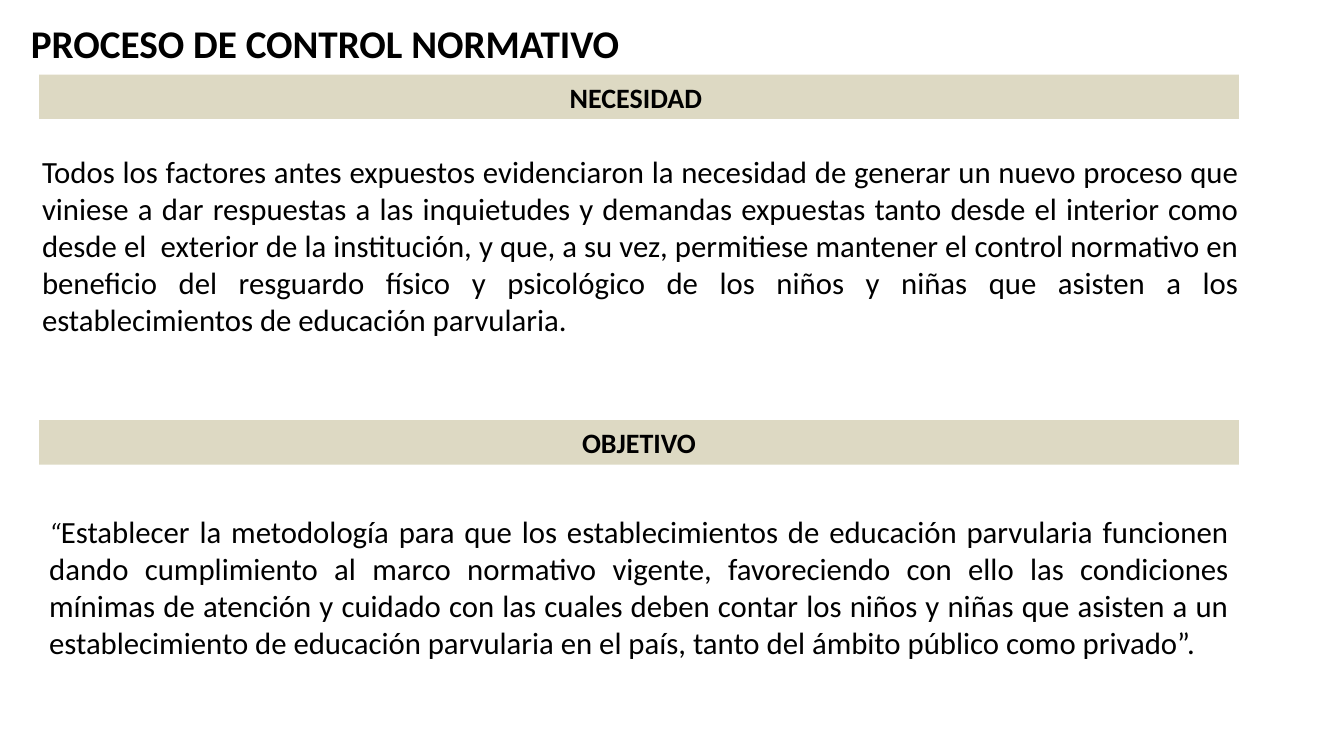
from pptx import Presentation
from pptx.dml.color import RGBColor
from pptx.enum.shapes import MSO_SHAPE
from pptx.enum.text import MSO_ANCHOR, PP_ALIGN
from pptx.util import Cm, Pt

RECTANGLE = MSO_SHAPE.RECTANGLE
MIDDLE = MSO_ANCHOR.MIDDLE
LEFT, CENTER, JUSTIFY = PP_ALIGN.LEFT, PP_ALIGN.CENTER, PP_ALIGN.JUSTIFY

COLORS = {"text": "000000", "band": "DDD9C3"}
FONT = "Calibri"
BAND_HEIGHT = 1.12

NEED = (
    "Todos los factores antes expuestos evidenciaron la necesidad de generar un nuevo "
    "proceso que viniese a dar respuestas a las inquietudes y demandas expuestas tanto "
    "desde el interior como desde el  exterior de la institución, y que, a su vez, "
    "permitiese mantener el control normativo en beneficio del resguardo físico y "
    "psicológico de los niños y niñas que asisten a los establecimientos de educación "
    "parvularia."
)
GOAL = (
    "Establecer la metodología para que los establecimientos de educación parvularia "
    "funcionen dando cumplimiento al marco normativo vigente, favoreciendo con ello las "
    "condiciones mínimas de atención y cuidado con las cuales deben contar los niños y "
    "niñas que asisten a un establecimiento de educación parvularia en el país, tanto "
    "del ámbito público como privado”. "
)


def color(name):
    return RGBColor.from_string(COLORS[name])


def write(shape, spans, align):
    """Fill a shape with one paragraph of (text, size, bold, italic) spans."""
    shape.text_frame.word_wrap = True
    para = shape.text_frame.paragraphs[0]
    para.alignment = align
    for text, size, bold, italic in spans:
        span = para.add_run()
        span.text = text
        span.font.name = FONT
        span.font.size = Pt(size)
        span.font.bold = bold
        span.font.italic = italic
        span.font.color.rgb = color("text")


def add_text(page, box, spans, align):
    shape = page.shapes.add_textbox(*(Cm(length) for length in box))
    write(shape, spans, align)


def add_band(page, box, heading):
    band = page.shapes.add_shape(RECTANGLE, *(Cm(length) for length in box))
    band.shadow.inherit = False
    band.fill.solid()
    band.fill.fore_color.rgb = color("band")
    band.line.fill.background()
    band.text_frame.vertical_anchor = MIDDLE
    write(band, [(heading, 20, True, False)], CENTER)


def add_section(page, box, heading, spans, body_gap, outset=0):
    """Heading band with justified text below; outset widens the text to the left and right."""
    left, top, width, height = box
    add_band(page, (left, top, width, BAND_HEIGHT), heading)
    body_top = BAND_HEIGHT + body_gap
    body = (left - outset, top + body_top, width + 2.4 * outset, height - body_top)
    add_text(page, body, spans, JUSTIFY)


def main():
    deck = Presentation()
    deck.slide_width, deck.slide_height = Cm(33.87), Cm(19.05)
    page = deck.slides.add_slide(deck.slide_layouts[6])

    # Title
    add_text(page, (0.53, 0.36, 18.24, 1.45),
             [("PROCESO DE CONTROL NORMATIVO", 28, True, False)], LEFT)

    # Need
    add_section(page, (0.99, 1.88, 30.23, 6.8), "NECESIDAD ",
                [(NEED, 22, False, False)], body_gap=0.73, outset=0.18)

    # Goal
    add_section(page, (0.99, 10.59, 30.23, 6.22), "OBJETIVO",
                [("“", 20, False, True), (GOAL, 22, False, False)], body_gap=1.09)

    deck.save("out.pptx")


if __name__ == "__main__":
    main()
